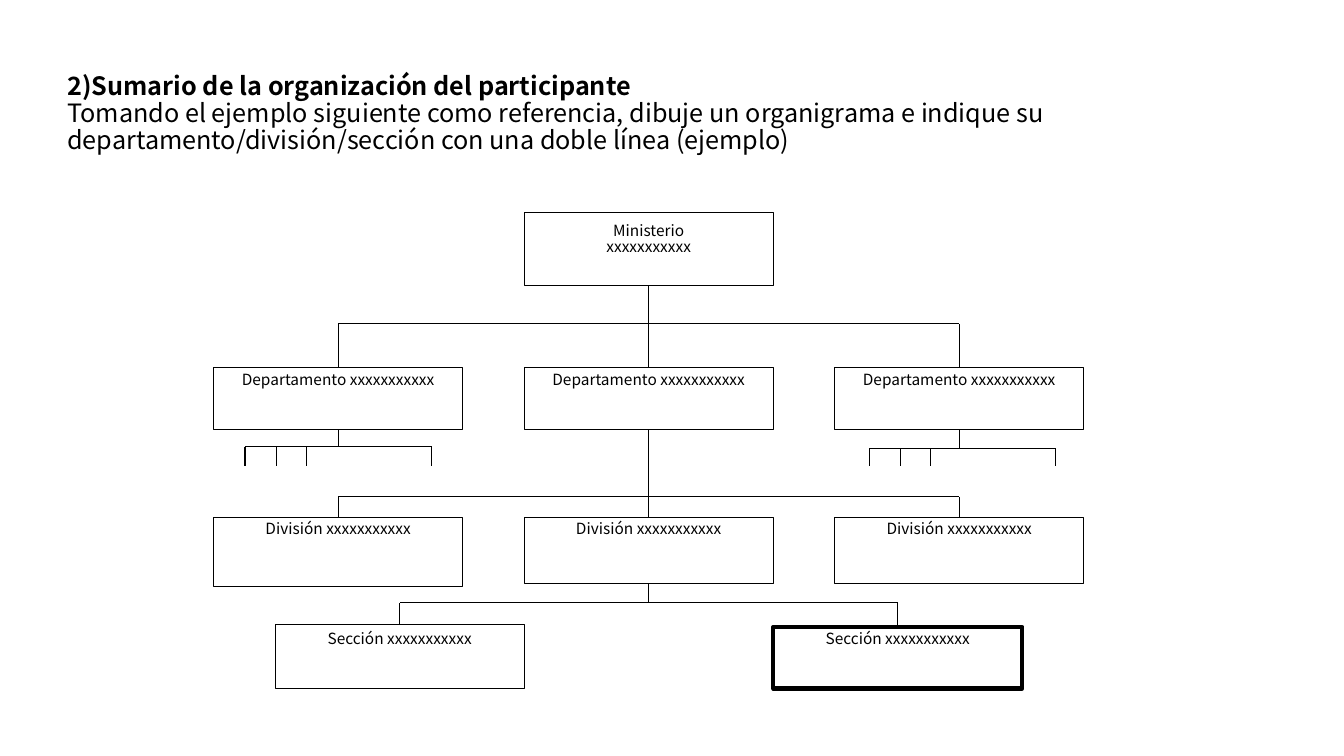
from lxml import etree
from pptx import Presentation
from pptx.dml.color import RGBColor
from pptx.enum.shapes import MSO_CONNECTOR, MSO_SHAPE
from pptx.enum.text import MSO_ANCHOR, PP_ALIGN
from pptx.oxml.ns import qn
from pptx.util import Inches, Pt

RECTANGLE = MSO_SHAPE.RECTANGLE
STRAIGHT = MSO_CONNECTOR.STRAIGHT
TOP, MIDDLE = MSO_ANCHOR.TOP, MSO_ANCHOR.MIDDLE
LEFT, CENTER = PP_ALIGN.LEFT, PP_ALIGN.CENTER
TOP_SIDE, BOTTOM_SIDE = 0, 2


def color(hex_code):
    return RGBColor.from_string(hex_code)


class OrgChart:
    font = "Noto Sans CJK JP"
    ink = "000000"
    paper = "FFFFFF"
    line_width = 0.75
    box_width = 2.47

    def __init__(self, slide):
        self.slide = slide

    def style_paragraph(self, paragraph, size, align, spacing, bold=False):
        paragraph.alignment = align
        paragraph.line_spacing = spacing
        for run in paragraph.runs:
            run.font.name = self.font
            run.font.size = Pt(size)
            run.font.bold = bold
            run.font.color.rgb = color(self.ink)

    def title(self, heading, instruction):
        frame = self.slide.shapes.add_textbox(
            Inches(0.57), Inches(0.21), Inches(11.84), Inches(1.85)).text_frame
        frame.word_wrap = True
        frame.vertical_anchor = MIDDLE
        frame.text = f"{heading}\n{instruction}"
        for paragraph, bold in zip(frame.paragraphs, (True, False)):
            self.style_paragraph(paragraph, 18, LEFT, 0.9, bold)

    def box(self, text, left, top, height, width_pt=line_width, first_leading=12):
        unit = self.slide.shapes.add_shape(
            RECTANGLE, Inches(left), Inches(top), Inches(self.box_width), Inches(height))
        unit.shadow.inherit = False
        unit.fill.solid()
        unit.fill.fore_color.rgb = color(self.paper)
        unit.line.color.rgb = color(self.ink)
        unit.line.width = Pt(width_pt)
        frame = unit.text_frame
        frame.word_wrap = True
        frame.vertical_anchor = TOP
        frame.margin_left = frame.margin_right = Inches(0.04)
        frame.margin_top = frame.margin_bottom = Inches(0.04)
        frame.text = text
        for index, paragraph in enumerate(frame.paragraphs):
            leading = 12 if index else first_leading
            self.style_paragraph(paragraph, 11, CENTER, Pt(leading))
        return unit

    def line(self, x1, y1, x2, y2):
        link = self.slide.shapes.add_connector(STRAIGHT, x1, y1, x2, y2)
        link.line.color.rgb = color(self.ink)
        link.line.width = Pt(self.line_width)
        etree.SubElement(link._element.spPr, qn("a:effectLst"))
        return link

    def center(self, unit):
        return unit.left + unit.width // 2

    def stem(self, unit, side, y):
        """Vertical line from a box side to height y."""
        x = self.center(unit)
        self.line(x, unit.top, x, Inches(y)).begin_connect(unit, side)

    def link(self, upper, lower):
        joint = self.line(0, 0, 0, 0)
        joint.begin_connect(upper, BOTTOM_SIDE)
        joint.end_connect(lower, TOP_SIDE)

    def branch(self, first, last, y):
        """Horizontal line with a drop to the two outer boxes."""
        self.line(self.center(first), Inches(y), self.center(last), Inches(y))
        for unit in (first, last):
            self.stem(unit, TOP_SIDE, y)

    def comb(self, unit, left, y):
        """Short open branches below a box."""
        self.stem(unit, BOTTOM_SIDE, y)
        self.line(Inches(left), Inches(y), Inches(left + 1.85), Inches(y))
        for offset in (0, 0.31, 0.61, 1.85):
            x = Inches(left + offset)
            self.line(x, Inches(y), x, Inches(4.62))


def main():
    prs = Presentation()
    prs.slide_width, prs.slide_height = Inches(13.33), Inches(7.5)
    chart = OrgChart(prs.slides.add_slide(prs.slide_layouts[6]))

    # Title
    chart.title(
        "2)Sumario de la organización del participante",
        "Tomando el ejemplo siguiente como referencia, dibuje un organigrama e indique "
        "su departamento/división/sección con una doble línea (ejemplo)")

    # Boxes by level
    columns = [2.12 + 3.08 * i for i in range(3)]
    ministry = chart.box("Ministerio\nxxxxxxxxxxx", columns[1], 2.11, 0.72,
                         first_leading=16)
    departments = [chart.box("Departamento xxxxxxxxxxx", x, 3.65, 0.61) for x in columns]
    divisions = [chart.box("División xxxxxxxxxxx", x, 5.13, height)
                 for x, height in zip(columns, (0.69, 0.66, 0.66))]
    section = chart.box("Sección xxxxxxxxxxx", 2.73, 6.2, 0.63, first_leading=13)
    own_section = chart.box("Sección xxxxxxxxxxx", 7.67, 6.22, 0.61, width_pt=3)

    # Central trunk
    chart.link(ministry, departments[1])
    chart.link(departments[1], divisions[1])
    chart.stem(divisions[1], BOTTOM_SIDE, 5.98)

    # Branches to each level
    chart.branch(departments[0], departments[2], 3.21)
    chart.branch(divisions[0], divisions[2], 4.93)
    chart.branch(section, own_section, 5.98)

    # Open branches of the outer departments
    chart.comb(departments[0], 2.43, 4.43)
    chart.comb(departments[2], 8.62, 4.45)

    prs.save("out.pptx")


if __name__ == "__main__":
    main()
